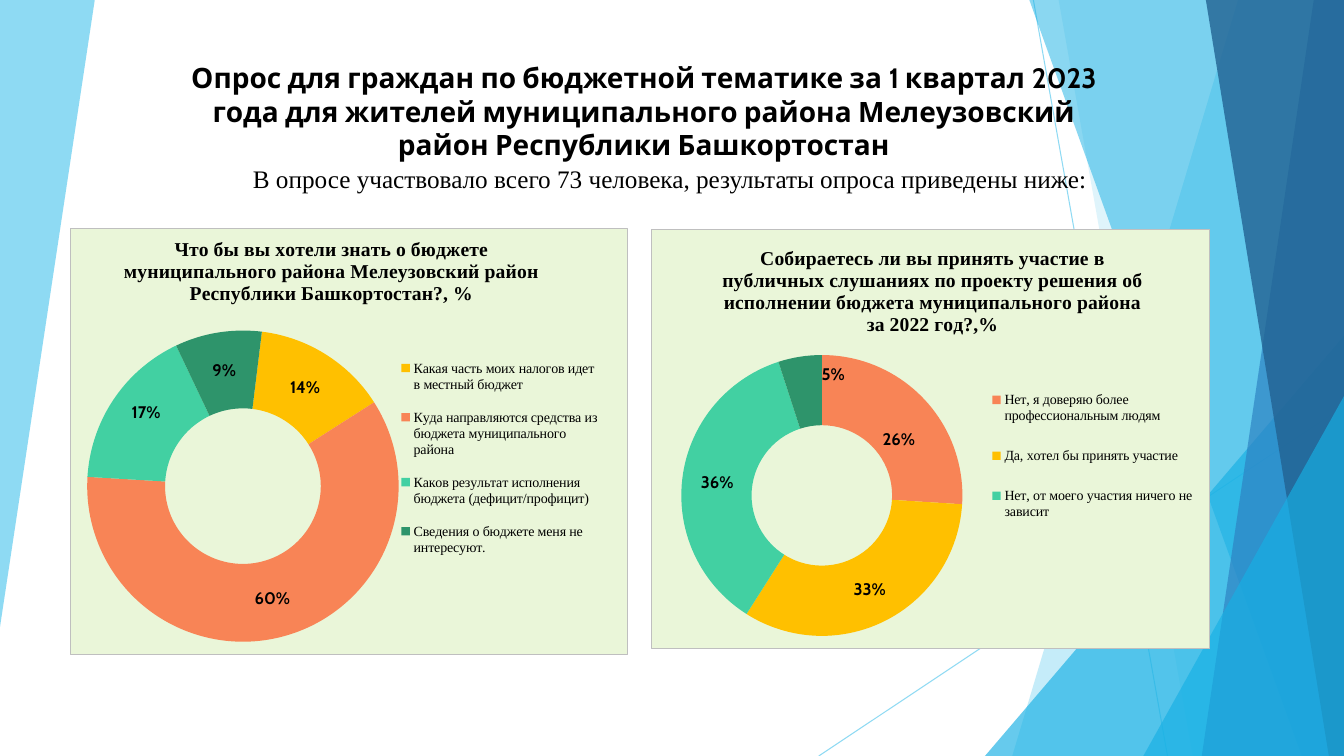
from copy import deepcopy
from dataclasses import dataclass

from pptx import Presentation
from pptx.chart.data import CategoryChartData
from pptx.dml.color import RGBColor
from pptx.enum.chart import XL_CHART_TYPE as ChartType, XL_LEGEND_POSITION as LegendPosition
from pptx.enum.shapes import MSO_CONNECTOR as Connector, MSO_SHAPE as Preset
from pptx.enum.text import MSO_ANCHOR as Anchor, PP_ALIGN as Align
from pptx.oxml import parse_xml
from pptx.oxml.ns import nsdecls, qn
from pptx.util import Emu, Inches, Pt

COLORS = {
    "sky": "5FCBEF", "azure": "17B0E4", "blue": "2E83C3", "navy": "226292",
    "coral": "F88456", "amber": "FFC000", "mint": "42D0A2", "green": "2E946B",
    "panel": "EAF6D9", "border": "BFBFBF", "black": "000000",
}
SANS, SERIF = "Cabin", "Times New Roman"
WIDTH, HEIGHT = Inches(13.33), Inches(7.5)

Point = tuple[float, float]
Box = tuple[float, float, float, float]


@dataclass
class Facet:
    points: list[Point]
    color: str
    opacity: int


@dataclass
class Wedge:
    left: float
    top: float
    color: str
    opacity: int


@dataclass
class Ray:
    start: Point
    end: Point


@dataclass
class Survey:
    box: Box
    question: str
    answers: list[tuple[str, int, str]]
    title_at: Point
    plot_box: Box
    legend_box: Box
    nudges: dict[int, Point]
    start_angle: int = 0


BACKDROP = [
    Facet([(0, 0), (7.05, 0), (0, 82.93)], "sky", 70),
    Ray((76.89, 0), (86.87, 100)),
    Ray((100, 53.73), (60.92, 100)),
    Facet([(92.12, 0), (100, 0), (100, 100), (75.32, 100)], "sky", 36),
    Facet([(78.77, 0), (100, 0), (100, 100), (88.75, 100)], "sky", 20),
    Wedge(73.29, 44.4, "azure", 66),
    Facet([(76.59, 0), (100, 0), (100, 100), (96.85, 100)], "azure", 50),
    Facet([(97.75, 0), (100, 0), (100, 100), (89.42, 100)], "blue", 70),
    Facet([(89.72, 0), (100, 0), (100, 100), (98.87, 100)], "navy", 80),
    Wedge(85.07, 52.4, "azure", 66),
]

SURVEYS = [
    Survey(
        (48.46, 30.27, 41.56, 55.6),
        "Собираетесь ли вы принять участие в публичных слушаниях по проекту решения об "
        "исполнении бюджета муниципального района за 2022 год?,%",
        [("Нет, я доверяю более профессиональным людям", 26, "coral"),
         ("Да, хотел бы принять участие", 33, "amber"),
         ("Нет, от моего участия ничего не зависит", 36, "mint"),
         ("", 5, "green")],
        (0.12, 0.03), (0.05, 0.3, 0.51, 0.67), (0.6, 0.33, 0.38, 0.42),
        {0: (0, 0.04), 3: (0.05, -0.04)}),
    Survey(
        (5.18, 30.13, 41.56, 56.53),
        "Что бы вы хотели знать о бюджете муниципального района Мелеузовский район "
        "Республики Башкортостан?, %",
        [("Какая часть моих налогов идет в местный бюджет", 14, "amber"),
         ("Куда направляются средства из бюджета муниципального района", 60, "coral"),
         ("Каков результат исполнения бюджета (дефицит/профицит)", 17, "mint"),
         ("Сведения о бюджете меня не интересуют.", 9, "green")],
        (0.09, 0.01), (0.03, 0.24, 0.56, 0.73), (0.59, 0.27, 0.36, 0.54),
        {2: (0, -0.02)}, start_angle=7),
]


def rgb(name: str) -> RGBColor:
    return RGBColor.from_string(COLORS[name])


def at(x: float, y: float) -> tuple[Emu, Emu]:
    return Emu(round(WIDTH * x / 100)), Emu(round(HEIGHT * y / 100))


def area(box: Box) -> tuple[Emu, ...]:
    return at(*box[:2]) + at(*box[2:])


def format_font(font, *, size: int, name: str, bold: bool = False) -> None:
    font.size, font.name, font.bold = Pt(size), name, bold
    font.color.rgb = rgb("black")


def write_text(frame, text: str, *, size: int, name: str, bold: bool = False) -> None:
    frame.word_wrap = True
    paragraph = frame.paragraphs[0]
    paragraph.alignment = Align.CENTER
    run = paragraph.add_run()
    run.text = text
    format_font(run.font, size=size, name=name, bold=bold)


def set_opacity(shape, percent: int) -> None:
    for color in shape._element.iter(qn("a:srgbClr")):
        color.append(parse_xml(f'<a:alpha {nsdecls("a")} val="{percent * 1000}"/>'))


def draw_backdrop_piece(shapes, piece: Facet | Wedge | Ray) -> None:
    if isinstance(piece, Ray):
        line = shapes.add_connector(Connector.STRAIGHT, *at(*piece.start), *at(*piece.end))
        line.line.color.rgb, line.line.width = rgb("sky"), Pt(0.75)
        set_opacity(line, 70)
        line._element.spPr.append(parse_xml(f'<a:effectLst {nsdecls("a")}/>'))
        return
    if isinstance(piece, Wedge):
        box = (piece.left, piece.top, 100 - piece.left, 100 - piece.top)
        shape = shapes.add_shape(Preset.ISOSCELES_TRIANGLE, *area(box))
        shape.adjustments[0] = 1
    else:
        first, *others = [at(*point) for point in piece.points]
        builder = shapes.build_freeform(*first)
        builder.add_line_segments(others, close=True)
        shape = builder.convert_to_shape()
    shape.shadow.inherit = False
    shape.fill.solid()
    shape.fill.fore_color.rgb = rgb(piece.color)
    shape.line.fill.background()
    set_opacity(shape, piece.opacity)


def layout_xml(values: tuple[float, ...], *, edge: bool = True, inner: bool = False):
    target = '<c:layoutTarget val="inner"/>' if inner else ""
    modes = '<c:xMode val="edge"/><c:yMode val="edge"/>' if edge else ""
    lengths = "".join(f'<c:{key} val="{value}"/>' for key, value in zip("xywh", values))
    return parse_xml(f'<c:layout {nsdecls("c")}><c:manualLayout>{target}{modes}{lengths}'
                     '</c:manualLayout></c:layout>')


def place(element, layout) -> None:
    for old in element.findall(qn("c:layout")):
        element.remove(old)
    overlay = element.find(qn("c:overlay"))
    if overlay is None:
        element.insert(0, layout)
    else:
        overlay.addprevious(layout)


def nudge_labels(labels, nudges: dict[int, Point]) -> None:
    shared = [child for child in labels if child.tag != qn("c:showLeaderLines")]
    for position, (index, shift) in enumerate(sorted(nudges.items())):
        label = parse_xml(f'<c:dLbl {nsdecls("c")}><c:idx val="{index}"/></c:dLbl>')
        label.append(layout_xml(shift, edge=False))
        label.extend([deepcopy(child) for child in shared])
        labels.insert(position, label)


def draw_survey(shapes, survey: Survey) -> None:
    data = CategoryChartData()
    data.categories = [answer for answer, _, _ in survey.answers]
    data.add_series("Series 1", [share for _, share, _ in survey.answers])
    chart = shapes.add_chart(ChartType.DOUGHNUT, *area(survey.box), data).chart
    format_font(chart.font, size=10, name=SANS)
    chart.has_title = True
    write_text(chart.chart_title.text_frame, survey.question, size=14, name=SERIF, bold=True)
    chart.chart_title.include_in_layout = False
    chart.has_legend = True
    legend = chart.legend
    legend.position, legend.include_in_layout = LegendPosition.RIGHT, False
    format_font(legend.font, size=10, name=SERIF)

    plot = chart.plots[0]
    plot.vary_by_categories = True
    series = plot.series[0]
    for index, (answer, _, color) in enumerate(survey.answers):
        fill = series.points[index].format.fill
        fill.solid()
        fill.fore_color.rgb = rgb(color)
        if not answer:
            legend._element.find(qn("c:legendPos")).addnext(parse_xml(
                f'<c:legendEntry {nsdecls("c")}><c:idx val="{index}"/><c:delete val="1"/>'
                '</c:legendEntry>'))
    labels = series.data_labels
    labels.show_value, labels.show_percentage = False, True
    labels.number_format, labels.number_format_is_linked = "0%", False
    format_font(labels.font, size=12, name=SANS, bold=True)
    nudge_labels(labels._element, survey.nudges)

    space = chart._chartSpace
    next(space.iter(qn("c:firstSliceAng"))).set("val", str(survey.start_angle))
    place(space.chart.find(qn("c:title")), layout_xml(survey.title_at))
    place(space.chart.plotArea, layout_xml(survey.plot_box, inner=True))
    place(legend._element, layout_xml(survey.legend_box))
    space.chart.addnext(parse_xml(
        f'<c:spPr {nsdecls("c", "a")}>'
        f'<a:solidFill><a:srgbClr val="{COLORS["panel"]}"/></a:solidFill>'
        f'<a:ln w="{Pt(0.75)}"><a:solidFill><a:srgbClr val="{COLORS["border"]}"/></a:solidFill>'
        '</a:ln></c:spPr>'))


def main() -> None:
    presentation = Presentation()
    presentation.slide_width, presentation.slide_height = WIDTH, HEIGHT
    slide = presentation.slides.add_slide(presentation.slide_layouts[5])
    shapes, title = slide.shapes, slide.shapes.title
    for piece in BACKDROP:
        draw_backdrop_piece(shapes, piece)
    title.left, title.top, title.width, title.height = area((11.78, 7.87, 72.24, 14.13))
    title.text_frame.vertical_anchor = Anchor.BOTTOM
    write_text(title.text_frame, "Опрос для граждан по бюджетной тематике за 1 квартал 2023 года "
               "для жителей муниципального района Мелеузовский район Республики Башкортостан",
               size=20, name=SANS, bold=True)
    shapes._spTree.append(title._element)
    summary = shapes.add_textbox(*area((14.4, 20.93, 70.89, 5.33)))
    write_text(summary.text_frame, "В опросе участвовало всего 73 человека, результаты опроса "
               "приведены ниже:", size=18, name=SERIF)
    for survey in SURVEYS:
        draw_survey(shapes, survey)
    presentation.save("out.pptx")


if __name__ == "__main__":
    main()
